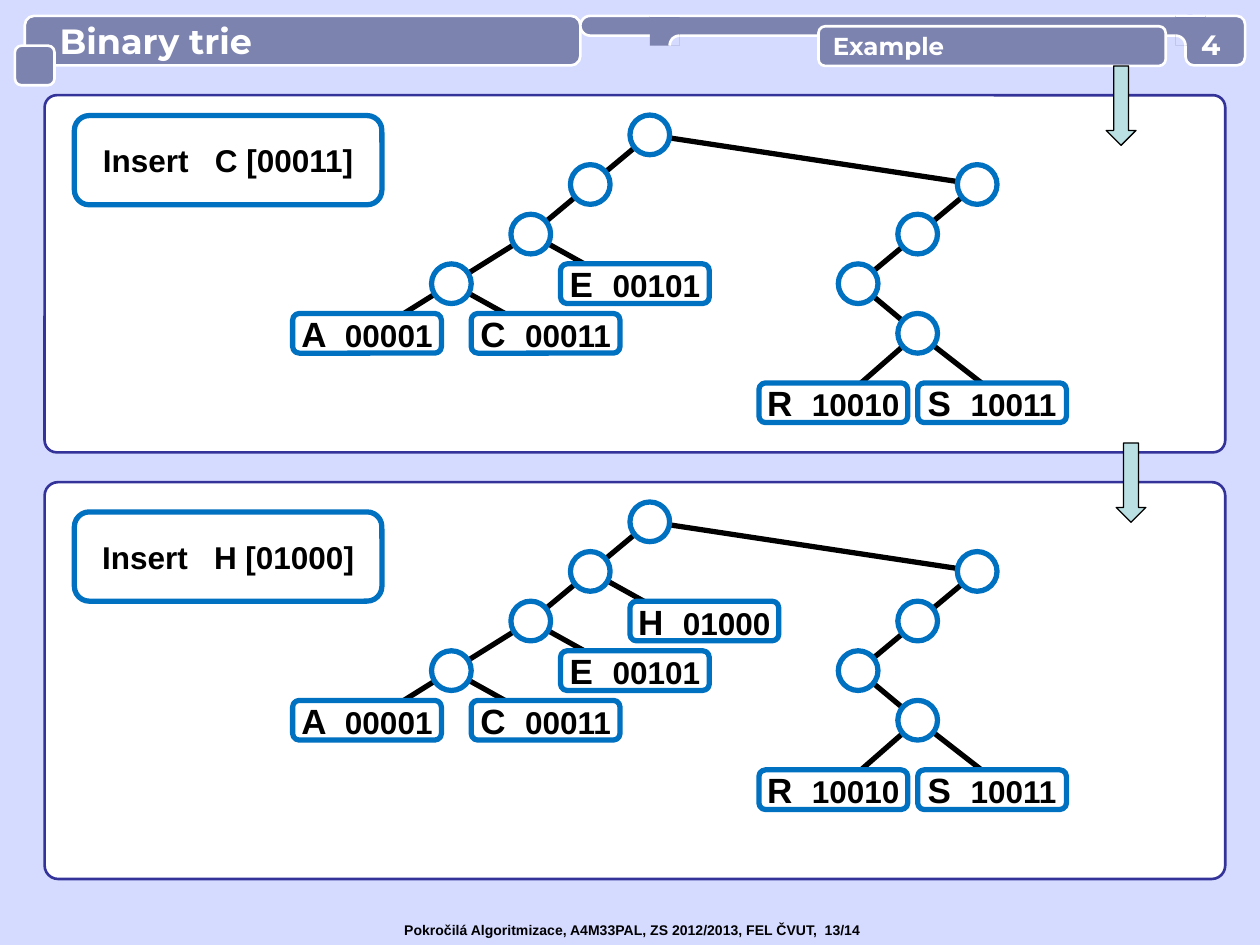
from math import cos, radians, sin

from lxml.etree import SubElement
from pptx import Presentation
from pptx.dml.color import RGBColor
from pptx.enum.shapes import MSO_CONNECTOR as Link, MSO_SHAPE as Kind
from pptx.enum.text import MSO_ANCHOR as Anchor, MSO_AUTO_SIZE as Fit, PP_ALIGN as Align
from pptx.oxml.ns import qn
from pptx.util import Cm, Pt

COLORS = {
    "background": "D5DAFF",
    "bar": "7D83AF",
    "white": "FFFFFF",
    "black": "000000",
    "panel": "333399",
    "node": "0070C0",
    "arrow": "BBE0E3",
}

# Centres in cm, measured from the left of the page and from the root of the tree.
INNER_NODES = {
    "root": (13.1, 0), "0": (11.9, 1), "00": (10.7, 2), "000": (9.1, 3),
    "1": (19.7, 1), "10": (18.5, 2), "100": (17.3, 3), "1001": (18.5, 4),
}
INNER_EDGES = [
    ("root", "0"), ("0", "00"), ("00", "000"), ("root", "1"),
    ("1", "10"), ("10", "100"), ("100", "1001"),
]
# Letter: code, parent, box centre x, y, and x where the edge ends behind the box.
LEAVES = {
    "A": ("00001", "000", 7.4, 4, 7.5),
    "C": ("00011", "000", 11.0, 4, 10.9),
    "E": ("00101", "00", 12.8, 3, 12.5),
    "R": ("10010", "1001", 16.8, 5.4, 16.9),
    "S": ("10011", "1001", 20.0, 5.4, 20.3),
    "H": ("01000", "0", 14.2, 2, 13.7),
}


def rgb(name):
    return RGBColor.from_string(COLORS[name])


class TrieSlide:
    def __init__(self, page):
        self.page = page
        self.shapes = page.shapes
        page.background.fill.solid()
        page.background.fill.fore_color.rgb = rgb("background")

    def paint(self, shape, fill, line, width):
        shape.shadow.inherit = False
        if fill:
            shape.fill.solid()
            shape.fill.fore_color.rgb = rgb(fill)
        else:
            shape.fill.background()
        if line:
            shape.line.color.rgb = rgb(line)
            shape.line.width = Pt(width)
        else:
            shape.line.fill.background()

    def shape(self, kind, x, y, width, height, fill, line=None, weight=1.5, radius=None):
        shape = self.shapes.add_shape(kind, Cm(x), Cm(y), Cm(width), Cm(height))
        self.paint(shape, fill, line, weight)
        if radius is not None:
            shape.adjustments[0] = radius
        return shape

    def bar(self, x, y, width, height, radius=0.17):
        return self.shape(Kind.ROUNDED_RECTANGLE, x, y, width, height, "bar", "white", radius=radius)

    def panel(self, y, height):
        self.shape(Kind.ROUNDED_RECTANGLE, 0.9, y, 23.8, height, "white", "panel", radius=0.034)

    def set_text(self, box, spans, font="Arial", color="black", align=Align.LEFT, margin=None, wrap=True):
        """Fill the box with one bold paragraph of (text, size) spans."""
        frame = box.text_frame
        frame.auto_size = Fit.NONE
        frame.word_wrap = wrap
        frame.vertical_anchor = Anchor.MIDDLE
        if margin is not None:
            frame.margin_left = frame.margin_right = Cm(margin)
            frame.margin_top = frame.margin_bottom = 0
        para = frame.paragraphs[0]
        para.alignment = align
        para.font.name = font
        para.font.bold = True
        para.font.color.rgb = rgb(color)
        para.font.size = Pt(spans[0][1])
        for text, size in spans:
            span = para.add_run()
            span.text = text
            if size != spans[0][1]:
                span.font.size = Pt(size)

    def heading(self, box, text, size, **style):
        self.set_text(box, [(text, size)], font="Montserrat", color="white", **style)

    def title(self, text, x, y, width, height):
        box = self.shapes.title
        box.left, box.top, box.width, box.height = Cm(x), Cm(y), Cm(width), Cm(height)
        self.shapes.element.append(box.element)  # in front of its bar
        self.heading(box, text, 20, margin=0.7)

    def text_box(self, x, y, width, height):
        return self.shapes.add_textbox(Cm(x), Cm(y), Cm(width), Cm(height))

    def line(self, start, end, color="black", weight=3):
        ends = [Cm(value) for value in (*start, *end)]
        line = self.shapes.add_connector(Link.STRAIGHT, *ends)
        line.line.color.rgb = rgb(color)
        line.line.width = Pt(weight)
        SubElement(line.element.spPr, qn("a:effectLst"))

    def notch(self, x, arc_x, start_angle):
        """Join two bars with a square that has a rounded inner corner."""
        self.shape(Kind.RECTANGLE, x, 0.32, 0.6, 0.6, "bar")
        self.line((x, 0.32), (x + 0.6, 0.32), "white", 1.5)
        center_y, radius = 0.92, 0.2
        angles = [radians(start_angle + step) for step in range(0, 91, 10)]
        arc = [(Cm(arc_x + radius * cos(a)), Cm(center_y + radius * sin(a))) for a in angles]
        for points, closed in ((arc + [(Cm(arc_x), Cm(center_y))], True), (arc, False)):
            builder = self.shapes.build_freeform(*points[0])
            builder.add_line_segments(points[1:], close=closed)
            corner = builder.convert_to_shape()
            self.paint(corner, "background" if closed else None, None if closed else "white", 1.5)

    def label(self, x, y, width, height, spans):
        box = self.shape(Kind.ROUNDED_RECTANGLE, x, y, width, height, "white", "node", 3)
        self.set_text(box, spans, align=Align.CENTER, margin=0)

    def arrow(self, x, y):
        arrow = self.shape(Kind.RIGHT_ARROW, x, y, 1.6, 0.6, "arrow", "black", 0.75)
        arrow.rotation = 90

    def tree(self, root_y, letters):
        nodes = {name: (x, root_y + y) for name, (x, y) in INNER_NODES.items()}
        for parent, child in INNER_EDGES:
            self.line(nodes[parent], nodes[child])
        for letter in letters:
            _, parent, _, y, edge_x = LEAVES[letter]
            self.line(nodes[parent], (edge_x, root_y + y))
        for x, y in nodes.values():
            self.shape(Kind.OVAL, x - 0.4, y - 0.4, 0.8, 0.8, "white", "node", 3)
        for letter in letters:
            code, _, x, y, _ = LEAVES[letter]
            self.label(x - 1.5, root_y + y - 0.4, 3, 0.8, [(letter + "  ", 20), (code, 18)])


def main():
    deck = Presentation()
    deck.slide_width, deck.slide_height = Cm(25.4), Cm(19.05)
    slide = TrieSlide(deck.slides.add_slide(deck.slide_layouts[5]))

    slide.panel(1.92, 7.2)
    slide.panel(9.72, 8.0)
    slide.tree(2.72, "ACERS")
    slide.tree(10.52, "ACERSH")

    slide.bar(0.5, 0.32, 11.2, 1, radius=0.19)
    slide.bar(11.7, 0.32, 12.4, 0.4, radius=0.5)
    slide.notch(13.1, 13.7, 180)
    slide.bar(0.3, 0.92, 0.8, 0.8)
    slide.bar(23.9, 0.32, 1.2, 1)
    slide.notch(23.7, 23.7, 270)
    slide.heading(slide.bar(16.5, 0.53, 7, 0.8), "Example", 14, wrap=False)
    slide.title("Binary trie", 0.5, 0.32, 11.2, 1)
    slide.heading(slide.text_box(23.9, 0.56, 1.02, 0.68), "4", 16, align=Align.CENTER, margin=0)

    slide.arrow(21.8, 1.83)
    slide.arrow(22, 9.43)
    slide.label(1.5, 2.33, 6.2, 1.8, [("Insert   C [00011]", 18)])
    slide.label(1.5, 10.32, 6.2, 1.8, [("Insert   H [01000]", 18)])
    footer = "Pokročilá Algoritmizace, A4M33PAL, ZS 2012/2013, FEL ČVUT,  13/14"
    slide.set_text(slide.text_box(7.9, 18.45, 9.9, 0.6), [(footer, 8)], wrap=False)

    deck.save("out.pptx")


if __name__ == "__main__":
    main()
